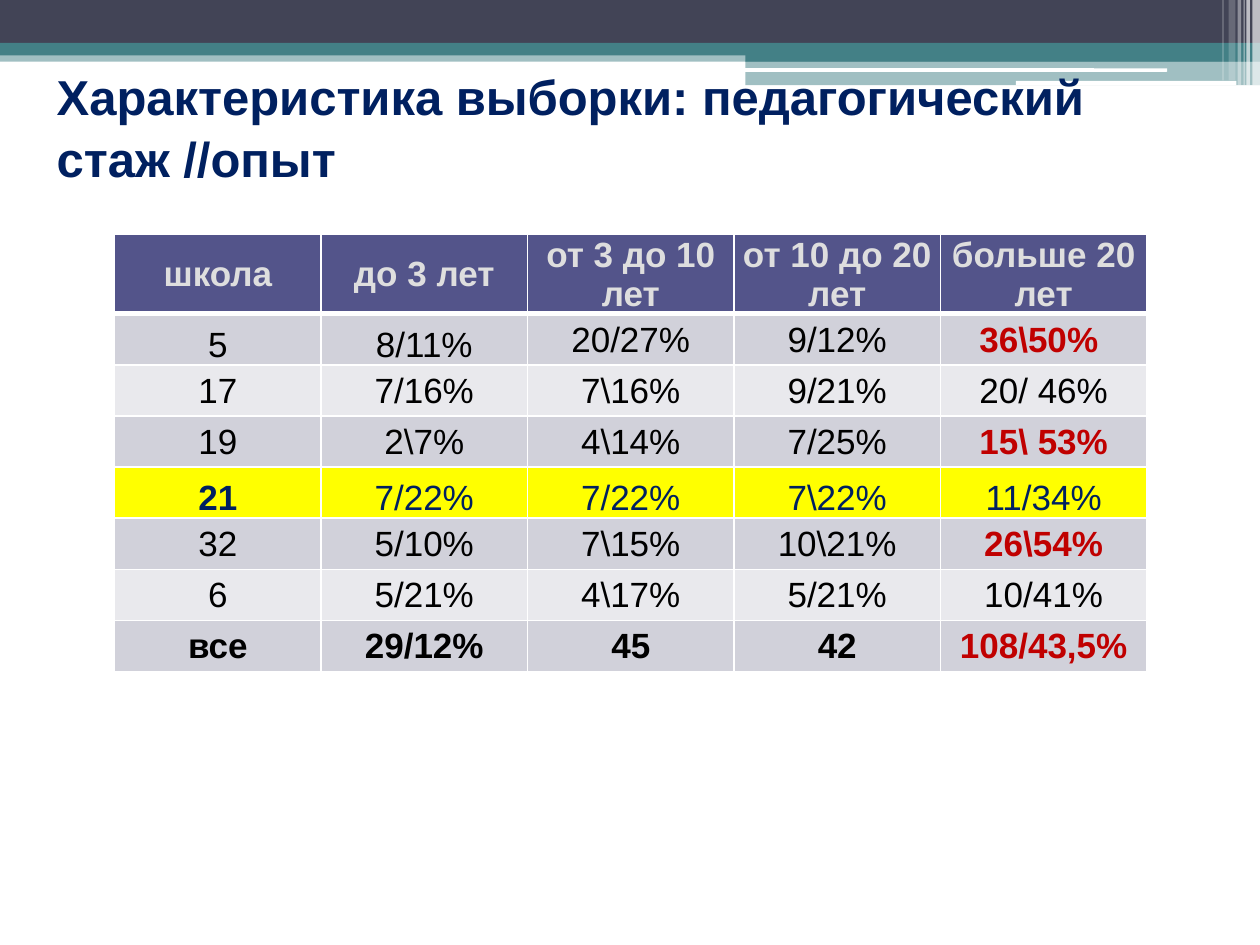
from dataclasses import dataclass

from lxml import etree
from pptx import Presentation, util as u
from pptx.dml.color import RGBColor
from pptx.enum import shapes, text
from pptx.oxml import ns

Pt = u.Pt


@dataclass(frozen=True)
class Theme:
    font: str = "Arial"
    title_size: float = 28
    cell_size: float = 20
    white: str = "FFFFFF"
    slate: str = "424456"
    teal: str = "438086"
    navy: str = "002060"
    header: str = "53548A"
    header_text: str = "DEDEDE"
    odd_row: str = "D1D1DA"
    even_row: str = "E9E9ED"
    highlight: str = "FFFF00"
    black: str = "000000"
    red: str = "C00000"


@dataclass(frozen=True)
class Bar:
    left: float
    top: float
    width: float
    height: float
    color: str
    opacity: int = 100
    rounded: bool = False


THEME = Theme()
BARS = [
    # Full-width bands
    Bar(0, 28.8, 720, 6.5, THEME.teal, 50),
    Bar(0, 0, 720, 24.5, THEME.slate),
    Bar(0, 24.5, 720, 7.2, THEME.teal),
    # Right-hand step with its white strips
    Bar(426, 28, 294, 7.2, THEME.teal),
    Bar(426, 34.6, 294, 14.1, THEME.teal, 50),
    Bar(425.5, 39, 241.5, 2, THEME.white, rounded=True),
    Bar(580.5, 46.2, 126, 2.6, THEME.white, rounded=True),
    # Vertical stripes in the corner
    Bar(715.6, 0, 4.4, 49, THEME.white, 65),
    Bar(712.2, 0, 2, 49, THEME.white, 65),
    Bar(710.6, 0, 0.7, 49, THEME.white, 60),
    Bar(707.2, 0, 2, 49, THEME.white, 40),
    Bar(702, 0, 4, 46, THEME.white, 20),
    Bar(698.5, 0, 0.7, 46, THEME.white, 30),
]

TITLE = "Характеристика выборки: педагогический стаж //опыт"
ROWS = [
    ["школа", "до 3 лет", "от 3 до 10 лет", "от 10 до 20 лет", "больше 20 лет"],
    ["5", "8/11%", "20/27%", "9/12%", "36\\50% "],
    ["17", "7/16%", "7\\16%", "9/21%", "20/ 46%"],
    ["19", "2\\7%", "4\\14%", "7/25%", "15\\ 53%"],
    ["21", "7/22%", "7/22%", "7\\22%", "11/34%"],
    ["32", "5/10%", "7\\15%", "10\\21%", "26\\54%"],
    ["6", "5/21%", "4\\17%", "5/21%", "10/41%"],
    ["все", "29/12%", "45", "42", "108/43,5%"],
]
HIGHLIGHT_ROW = 4
TOTAL_ROW = len(ROWS) - 1
RED_CELLS = {(1, 4), (3, 4), (5, 4), (TOTAL_ROW, 4)}
LOW_CELLS = {(1, 0), (1, 1)} | {(HIGHLIGHT_ROW, col) for col in range(5)}


def style_span(span, size: float, color: str, bold: bool) -> None:
    span.font.name = THEME.font
    span.font.size = Pt(size)
    span.font.bold = bold
    span.font.color.rgb = RGBColor.from_string(color)


def draw_bar(page, bar: Bar) -> None:
    kind = shapes.MSO_SHAPE.ROUNDED_RECTANGLE if bar.rounded else shapes.MSO_SHAPE.RECTANGLE
    box = page.shapes.add_shape(kind, Pt(bar.left), Pt(bar.top), Pt(bar.width), Pt(bar.height))
    box.shadow.inherit = False
    box.line.fill.background()
    box.fill.solid()
    box.fill.fore_color.rgb = RGBColor.from_string(bar.color)
    if bar.opacity < 100:
        color = box.fill._xPr.find(".//" + ns.qn("a:srgbClr"))
        etree.SubElement(color, ns.qn("a:alpha"), val=str(bar.opacity * 1000))


def draw_title(page) -> None:
    box = page.shapes.title
    box.left, box.top, box.width, box.height = Pt(25.2), Pt(49), Pt(659.5), Pt(45.4)
    frame = box.text_frame
    frame.text = TITLE
    frame.word_wrap = True
    frame.auto_size = text.MSO_AUTO_SIZE.NONE
    frame.vertical_anchor = text.MSO_ANCHOR.MIDDLE
    para = frame.paragraphs[0]
    para.alignment = text.PP_ALIGN.LEFT
    para.line_spacing = 1.05
    style_span(para.runs[0], THEME.title_size, THEME.navy, True)
    page.shapes._spTree.append(box._element)  # bring above the bars


def set_borders(cell, bottom: float, top: float) -> None:
    props = cell._tc.get_or_add_tcPr()
    sides = {"a:lnL": 1, "a:lnR": 1, "a:lnT": top, "a:lnB": bottom}
    for index, (tag, width) in enumerate(sides.items()):
        line = etree.Element(ns.qn(tag), w=str(Pt(width)))
        fill = etree.SubElement(line, ns.qn("a:solidFill"))
        etree.SubElement(fill, ns.qn("a:srgbClr"), val=THEME.white)
        props.insert(index, line)  # borders come before the fill


def row_fill(row: int) -> str:
    if row == 0:
        return THEME.header
    if row == HIGHLIGHT_ROW:
        return THEME.highlight
    return THEME.odd_row if row % 2 else THEME.even_row


def text_color(row: int, col: int) -> str:
    if (row, col) in RED_CELLS:
        return THEME.red
    return {0: THEME.header_text, HIGHLIGHT_ROW: THEME.navy}.get(row, THEME.black)


def draw_cell(cell, row: int, col: int) -> None:
    cell.text = ROWS[row][col]
    cell.margin_left = cell.margin_right = cell.margin_top = Pt(0.7)
    cell.margin_bottom = 0
    low = (row, col) in LOW_CELLS
    cell.vertical_anchor = text.MSO_ANCHOR.BOTTOM if low else text.MSO_ANCHOR.MIDDLE
    cell.fill.solid()
    cell.fill.fore_color.rgb = RGBColor.from_string(row_fill(row))
    set_borders(cell, bottom=3 if row == 0 else 1, top=3 if row == 1 else 1)
    para = cell.text_frame.paragraphs[0]
    para.alignment = text.PP_ALIGN.CENTER
    bold = row in (0, TOTAL_ROW) or (row, col) in RED_CELLS | {(HIGHLIGHT_ROW, 0)}
    style_span(para.runs[0], THEME.cell_size, text_color(row, col), bold)


def draw_table(page) -> None:
    columns = len(ROWS[0])
    table = page.shapes.add_table(
        len(ROWS), columns, Pt(65.5), Pt(134), Pt(118 * columns), Pt(250)
    ).table
    for column in table.columns:
        column.width = Pt(118)
    for row, line in enumerate(table.rows):
        line.height = Pt(29.2 if row else 45)
        for col in range(columns):
            draw_cell(table.cell(row, col), row, col)


def main() -> None:
    deck = Presentation()
    deck.slide_width, deck.slide_height = Pt(720), Pt(540)
    page = deck.slides.add_slide(deck.slide_layouts[5])  # title only
    for bar in BARS:
        draw_bar(page, bar)
    draw_title(page)
    draw_table(page)
    deck.save("out.pptx")


if __name__ == "__main__":
    main()
